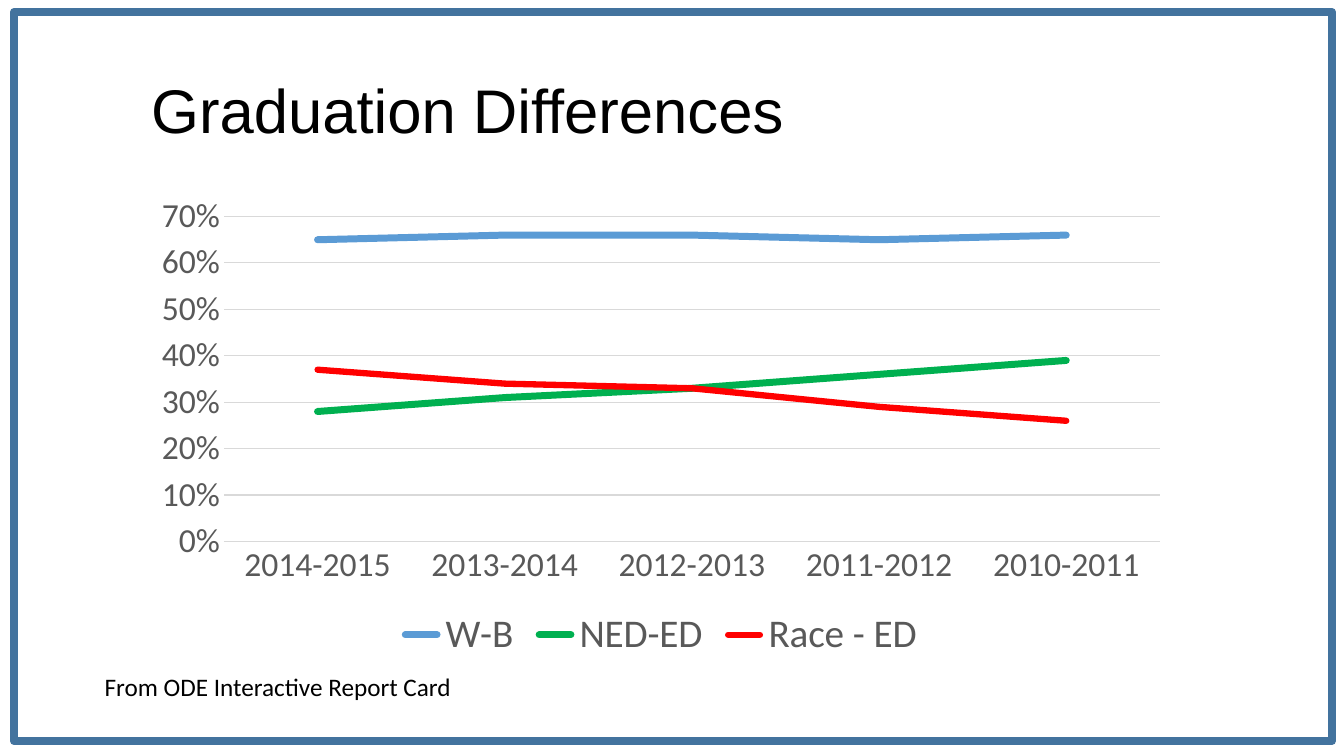
import pptx
import pptx.chart.data
import pptx.dml.color
import pptx.enum.chart
import pptx.enum.shapes
import pptx.enum.text
import pptx.util
from pptx.util import Inches

RGBColor = pptx.dml.color.RGBColor
BLACK = RGBColor(0x00, 0x00, 0x00)
FRAME_BLUE = RGBColor(0x43, 0x73, 0x9E)
LABEL_GRAY = RGBColor(0x59, 0x59, 0x59)
GRID_GRAY = RGBColor(0xD9, 0xD9, 0xD9)
SKY_BLUE = RGBColor(0x5B, 0x9B, 0xD5)
GREEN = RGBColor(0x00, 0xB0, 0x50)
RED = RGBColor(0xFF, 0x00, 0x00)

TITLE = "Graduation Differences"
SOURCE = "From ODE Interactive Report Card"
YEARS = ["2014-2015", "2013-2014", "2012-2013", "2011-2012", "2010-2011"]
GAPS = [
    ("W-B", [0.65, 0.66, 0.66, 0.65, 0.66], SKY_BLUE, 5),
    ("NED-ED", [0.28, 0.31, 0.33, 0.36, 0.39], GREEN, 5),
    ("Race - ED", [0.37, 0.34, 0.33, 0.29, 0.26], RED, 4.5),
]
LEFT, WIDTH = Inches(1.4), Inches(10.31)


def set_font(font, name, size, color):
    font.name = name
    font.size = pptx.util.Pt(size)
    font.color.rgb = color


def set_line(line, color, width):
    line.color.rgb = color
    line.width = pptx.util.Pt(width)


def add_frame(slide):
    frame = slide.shapes.add_shape(
        pptx.enum.shapes.MSO_SHAPE.RECTANGLE,
        Inches(0.14), Inches(0.12), Inches(13.07), Inches(7.23))
    frame.shadow.inherit = False
    frame.fill.background()
    set_line(frame.line, FRAME_BLUE, 6)


def add_title(slide):
    title = slide.shapes.title
    title.left, title.top = LEFT, Inches(0.4)
    title.width, title.height = WIDTH, Inches(1.45)
    title.text_frame.text = TITLE
    title.text_frame.vertical_anchor = pptx.enum.text.MSO_ANCHOR.MIDDLE
    heading = title.text_frame.paragraphs[0]
    heading.alignment = pptx.enum.text.PP_ALIGN.LEFT
    heading.line_spacing = 0.9
    set_font(heading.font, "Arial", 44, BLACK)


def add_gap_chart(slide):
    data = pptx.chart.data.CategoryChartData(number_format="0%")
    data.categories = YEARS
    for name, values, _, _ in GAPS:
        data.add_series(name, values)
    chart = slide.shapes.add_chart(
        pptx.enum.chart.XL_CHART_TYPE.LINE,
        LEFT, Inches(1.85), WIDTH, Inches(4.76), data).chart
    set_font(chart.font, "Calibri", 10, BLACK)
    chart.has_title = False
    chart.has_legend = True
    chart.legend.position = pptx.enum.chart.XL_LEGEND_POSITION.BOTTOM
    chart.legend.include_in_layout = False
    set_font(chart.legend.font, "Calibri", 28, LABEL_GRAY)

    for axis in (chart.category_axis, chart.value_axis):
        axis.major_tick_mark = pptx.enum.chart.XL_TICK_MARK.NONE
        axis.minor_tick_mark = pptx.enum.chart.XL_TICK_MARK.NONE
        set_font(axis.tick_labels.font, "Calibri", 24, LABEL_GRAY)
    set_line(chart.category_axis.format.line, GRID_GRAY, 0.75)
    percent = chart.value_axis
    percent.minimum_scale, percent.maximum_scale, percent.major_unit = 0, 0.7, 0.1
    percent.tick_labels.number_format = "0%"
    percent.tick_labels.number_format_is_linked = False
    percent.format.line.fill.background()
    set_line(percent.major_gridlines.format.line, GRID_GRAY, 0.75)

    plot = chart.plots[0]
    plot.vary_by_categories = False
    for series, (_, _, color, width) in zip(plot.series, GAPS):
        series.smooth = False
        series.marker.style = pptx.enum.chart.XL_MARKER_STYLE.NONE
        set_line(series.format.line, color, width)
        series.format.line.fill.fore_color.rgb = color
        for stroke in series._element.xpath("./c:spPr/a:ln"):
            stroke.set("cap", "rnd")


def add_source(slide):
    source = slide.shapes.add_textbox(
        Inches(0.94), Inches(6.61), Inches(3.67), Inches(0.4))
    source.text_frame.text = SOURCE
    source.text_frame.word_wrap = False
    source.text_frame.auto_size = pptx.enum.text.MSO_AUTO_SIZE.SHAPE_TO_FIT_TEXT
    set_font(source.text_frame.paragraphs[0].font, "Calibri", 18, BLACK)


def main():
    deck = pptx.Presentation()
    deck.slide_width, deck.slide_height = Inches(13.33), Inches(7.5)
    slide = deck.slides.add_slide(deck.slide_layouts[5])
    add_frame(slide)
    add_title(slide)
    add_gap_chart(slide)
    add_source(slide)
    deck.save("out.pptx")


if __name__ == "__main__":
    main()
